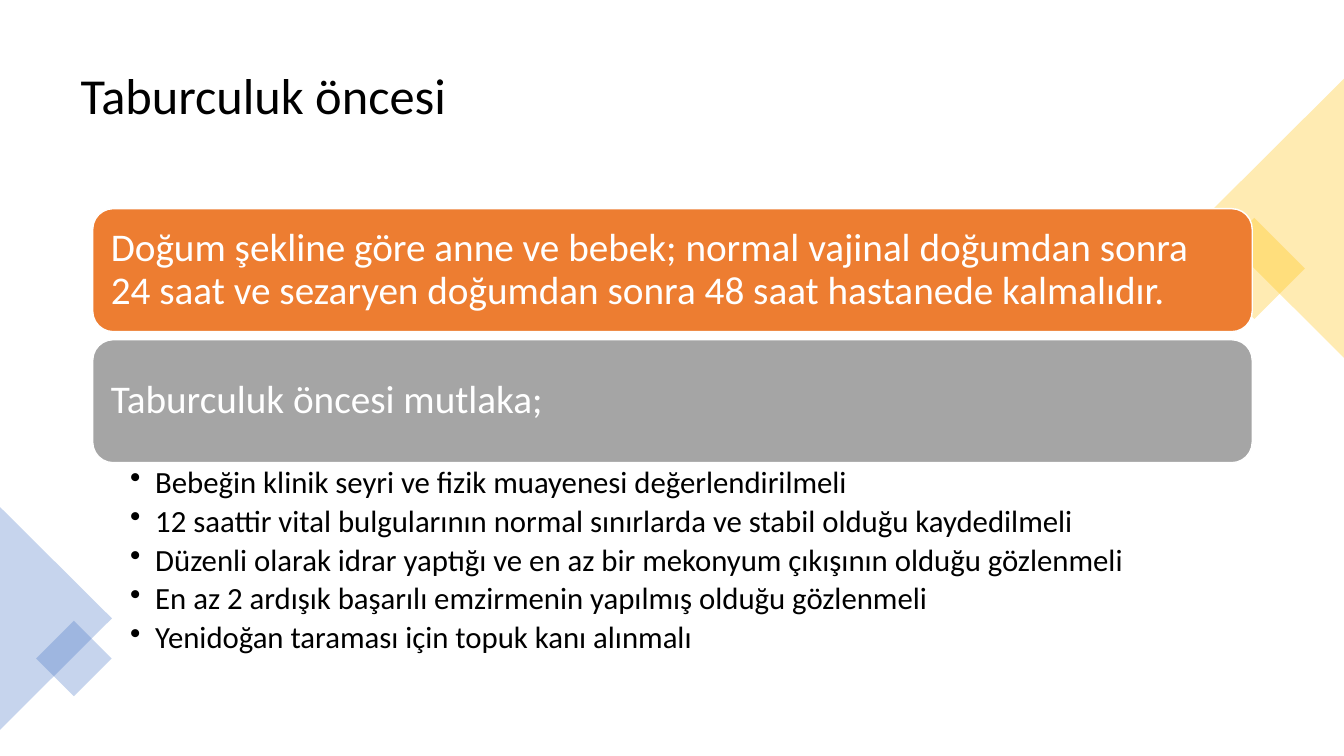
from lxml import etree
from pptx import Presentation
from pptx import util as u
from pptx.dml.color import RGBColor
from pptx.enum import shapes, text
from pptx.oxml import ns

WIDTH, HEIGHT = 13.33, 7.5
BLACK = RGBColor(0x00, 0x00, 0x00)
WHITE = RGBColor(0xFF, 0xFF, 0xFF)
ORANGE = RGBColor(0xED, 0x7D, 0x31)
GRAY = RGBColor(0xA5, 0xA5, 0xA5)
GOLD = RGBColor(0xFF, 0xC0, 0x00)
BLUE = RGBColor(0x44, 0x72, 0xC4)

CARDS = [
    ("Doğum şekline göre anne ve bebek; normal vajinal doğumdan sonra 24 saat "
     "ve sezaryen doğumdan sonra 48 saat hastanede kalmalıdır.", ORANGE),
    ("Taburculuk öncesi mutlaka;", GRAY),
]
CHECKS = [
    "Bebeğin klinik seyri ve fizik muayenesi değerlendirilmeli",
    "12 saattir vital bulgularının normal sınırlarda ve stabil olduğu kaydedilmeli",
    "Düzenli olarak idrar yaptığı ve en az bir mekonyum çıkışının olduğu gözlenmeli",
    "En az 2 ardışık başarılı emzirmenin yapılmış olduğu gözlenmeli",
    "Yenidoğan taraması için topuk kanı alınmalı",
]


def apply_format(target, values):
    for name, value in values.items():
        setattr(target, name, value)


def place(shape, left, top, width, height):
    apply_format(shape, {"left": u.Inches(left), "top": u.Inches(top),
                         "width": u.Inches(width), "height": u.Inches(height)})


def format_frame(frame, anchor, left, top, right, bottom):
    apply_format(frame, {
        "word_wrap": True, "auto_size": text.MSO_AUTO_SIZE.NONE,
        "vertical_anchor": anchor,
        "margin_left": u.Inches(left), "margin_top": u.Inches(top),
        "margin_right": u.Inches(right), "margin_bottom": u.Inches(bottom)})


def write(paragraph, words, size, color):
    paragraph.text = words
    apply_format(paragraph, {"alignment": text.PP_ALIGN.LEFT, "line_spacing": 0.9})
    apply_format(paragraph.font, {"name": "Calibri", "size": u.Pt(size)})
    paragraph.font.color.rgb = color


def add_filled(slide, kind, box, color):
    shape = slide.shapes.add_shape(kind, *map(u.Inches, box))
    shape.shadow.inherit = False
    shape.fill.solid()
    shape.fill.fore_color.rgb = color
    return shape


def add_title(slide, words, box):
    title = slide.shapes.title
    place(title, *box)
    format_frame(title.text_frame, text.MSO_ANCHOR.MIDDLE, 0.1, 0.05, 0.1, 0.05)
    write(title.text_frame.paragraphs[0], words, 36, BLACK)


def add_corner(slide, box, color, triangle_turn, square_center, square_side):
    """Half diamond filling the box, with a small diamond beside its tip."""
    left, top, width, height = box
    # The triangle is drawn upright around the box centre, then turned
    triangle = (left + (width - height) / 2, top + (height - width) / 2, height, width)
    x, y = square_center
    square = (left + x * width - square_side / 2, top + y * height - square_side / 2,
              square_side, square_side)
    parts = [(shapes.MSO_SHAPE.ISOSCELES_TRIANGLE, triangle, triangle_turn),
             (shapes.MSO_SHAPE.RECTANGLE, square, 45)]
    for kind, part_box, turn in parts:
        shape = add_filled(slide, kind, part_box, color)
        shape.rotation = turn
        shape.line.fill.background()
        fill = shape.fill._xPr.find(ns.qn("a:solidFill"))
        etree.SubElement(fill[0], ns.qn("a:alpha"), val="30000")


def add_cards(slide, box, gap):
    left, top, width, height = box
    card_height = (height - gap * (len(CARDS) - 1)) / len(CARDS)
    for row, (words, color) in enumerate(CARDS):
        card = add_filled(slide, shapes.MSO_SHAPE.ROUNDED_RECTANGLE,
                          (left, top + row * (card_height + gap), width, card_height),
                          color)
        card.line.color.rgb = WHITE
        card.line.width = u.Pt(1)
        format_frame(card.text_frame, text.MSO_ANCHOR.MIDDLE, *[0.12] * 4)
        write(card.text_frame.paragraphs[0], words, 28, WHITE)


def add_checks(slide, box):
    frame = slide.shapes.add_textbox(*map(u.Inches, box)).text_frame
    format_frame(frame, text.MSO_ANCHOR.TOP, 0.37, 0.04, 0.22, 0.04)
    for row, words in enumerate(CHECKS):
        paragraph = frame.add_paragraph() if row else frame.paragraphs[0]
        paragraph.level = 1
        properties = paragraph._p.get_or_add_pPr()
        properties.set("marL", str(u.Inches(0.25)))
        properties.set("indent", str(-u.Inches(0.25)))
        etree.SubElement(properties, ns.qn("a:buChar"), char="•")
        write(paragraph, words, 22, BLACK)
        paragraph.space_after = u.Pt(4)


def main():
    presentation = Presentation()
    presentation.slide_width = u.Inches(WIDTH)
    presentation.slide_height = u.Inches(HEIGHT)
    slide = presentation.slides.add_slide(presentation.slide_layouts[5])

    # Title
    add_title(slide, "Taburculuk öncesi", (0.7, 0.35, 11.93, 1.24))
    # Corner decoration on the right and left edges
    add_corner(slide, (WIDTH - 1.39, 0.78, 1.39, 2.77), GOLD, 270, (0.36, 0.68), 0.71)
    add_corner(slide, (0, 5.03, 1.11, 2.21), BLUE, 90, (0.66, 0.68), 0.53)
    # Cards and the checklist below them
    add_cards(slide, (0.92, 2.07, 11.5, 2.52), 0.08)
    add_checks(slide, (0.92, 4.59, 11.5, 2.09))

    presentation.save("out.pptx")


if __name__ == "__main__":
    main()
